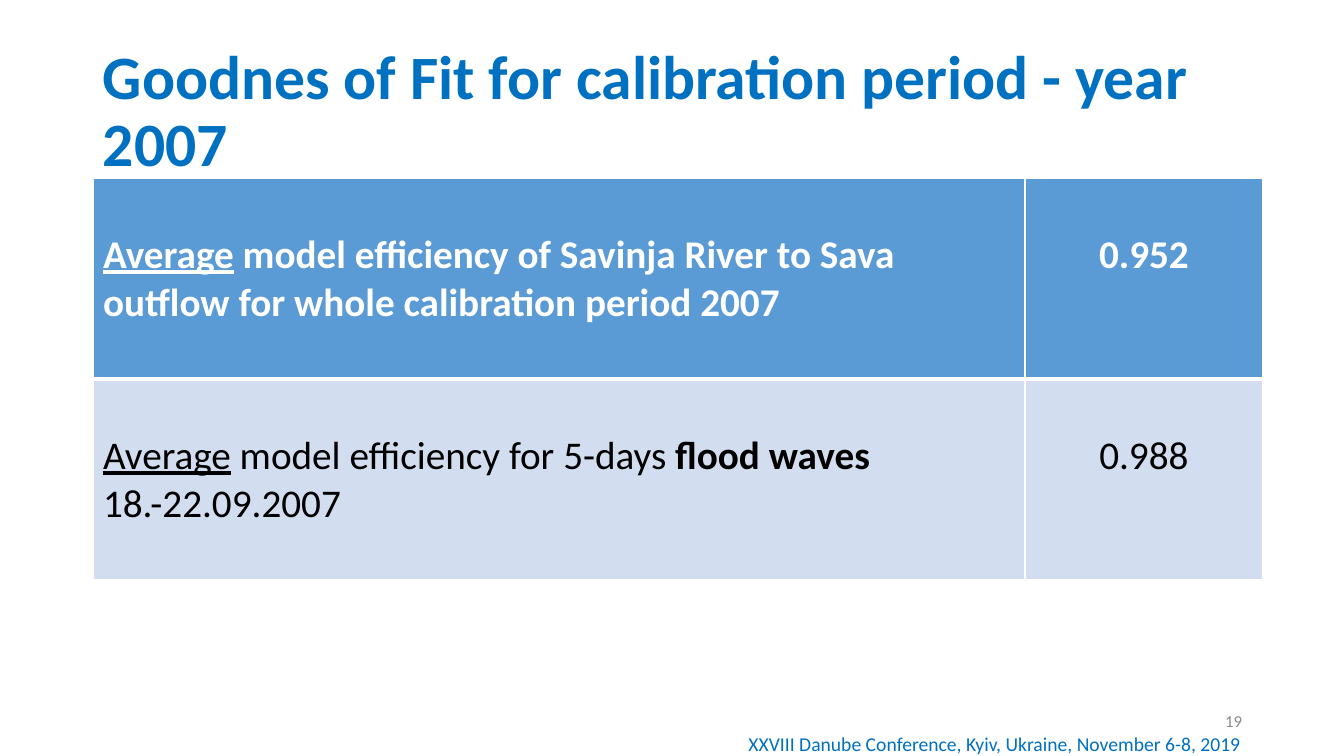
from lxml.etree import SubElement as Sub
from pptx import Presentation
from pptx.dml.color import RGBColor
from pptx.enum.text import MSO_ANCHOR as Anchor, PP_ALIGN as Align
from pptx.oxml.ns import qn
from pptx.util import Emu, Pt

PX = 914400 / 100.8
BLUE, WHITE, BLACK = "0070C0", "FFFFFF", "000000"


def px(*sizes):
    """Turn pixel lengths into EMU."""
    return [Emu(round(size * PX)) for size in sizes]


def write(frame, parts, size, color, align=Align.LEFT):
    """Fill one paragraph with (text, format) parts; None is a line break."""
    frame.word_wrap = True
    para = frame.paragraphs[0]
    para.alignment = align
    for part in parts:
        if part is None:
            para.add_line_break()
            continue
        run = para.add_run()
        run.text = part[0]
        font = run.font
        font.color.rgb = RGBColor.from_string(color)
        look = {"name": "Calibri", "size": Pt(size), "bold": False, **part[1]}
        for key, value in look.items():
            setattr(font, key, value)
    return para


deck = Presentation()
deck.slide_width, deck.slide_height = px(1344, 756)
slide = deck.slides.add_slide(deck.slide_layouts[6])
shapes = slide.shapes

bold = {"bold": True}
line = {"underline": True}

# Title, page number and footer
texts = [
    ((93, 40, 1209, 146), "Goodnes of Fit for calibration period - year 2007",
     44, BLUE, Align.LEFT, Anchor.MIDDLE, bold),
    ((950, 701, 302, 40), "19", 12, "8C8C8C", Align.RIGHT, Anchor.MIDDLE, {}),
    ((732, 727, 519, 57),
     "XXVIII Danube Conference, Kyiv, Ukraine, November 6-8, 2019",
     14, BLUE, Align.RIGHT, Anchor.TOP, {}),
]
for place, text, size, color, align, anchor, look in texts:
    frame = shapes.add_textbox(*px(*place)).text_frame
    frame.vertical_anchor = anchor
    para = write(frame, [(text, look)], size, color, align)
    if size == 44:
        para.line_spacing = 0.9

# Table of model efficiency
rows = [
    ("5B9BD5", WHITE, [
        [("Average", bold | line),
         (" model efficiency of Savinja River to Sava outflow"
          " for whole calibration period 2007", bold)],
        [("0.952", bold)]]),
    ("D2DEEF", BLACK, [
        [("Average", line), (" model efficiency for 5-days ", {}),
         ("flood waves", bold), None, ("18.-22.09.2007", {})],
        [("0.988", {})]]),
]
table = shapes.add_table(2, 2, *px(93, 178, 1170, 402)).table
for col, wide in zip(table.columns, px(932, 238)):
    col.width = wide
for r, (fill, color, cells) in enumerate(rows):
    table.rows[r].height = px(201)[0]
    for c, parts in enumerate(cells):
        cell = table.cell(r, c)
        cell.margin_top = px(53)[0]
        props = cell._tc.get_or_add_tcPr()
        for side in "LRTB":
            thick = 3 if side == "TB"[r == 0] else 1
            edge = Sub(props, qn(f"a:ln{side}"), w=str(Pt(thick)))
            Sub(Sub(edge, qn("a:solidFill")), qn("a:srgbClr"), val=WHITE)
        cell.fill.solid()
        cell.fill.fore_color.rgb = RGBColor.from_string(fill)
        write(cell.text_frame, parts, 28, color,
              Align.CENTER if c else Align.LEFT)

deck.save("out.pptx")
